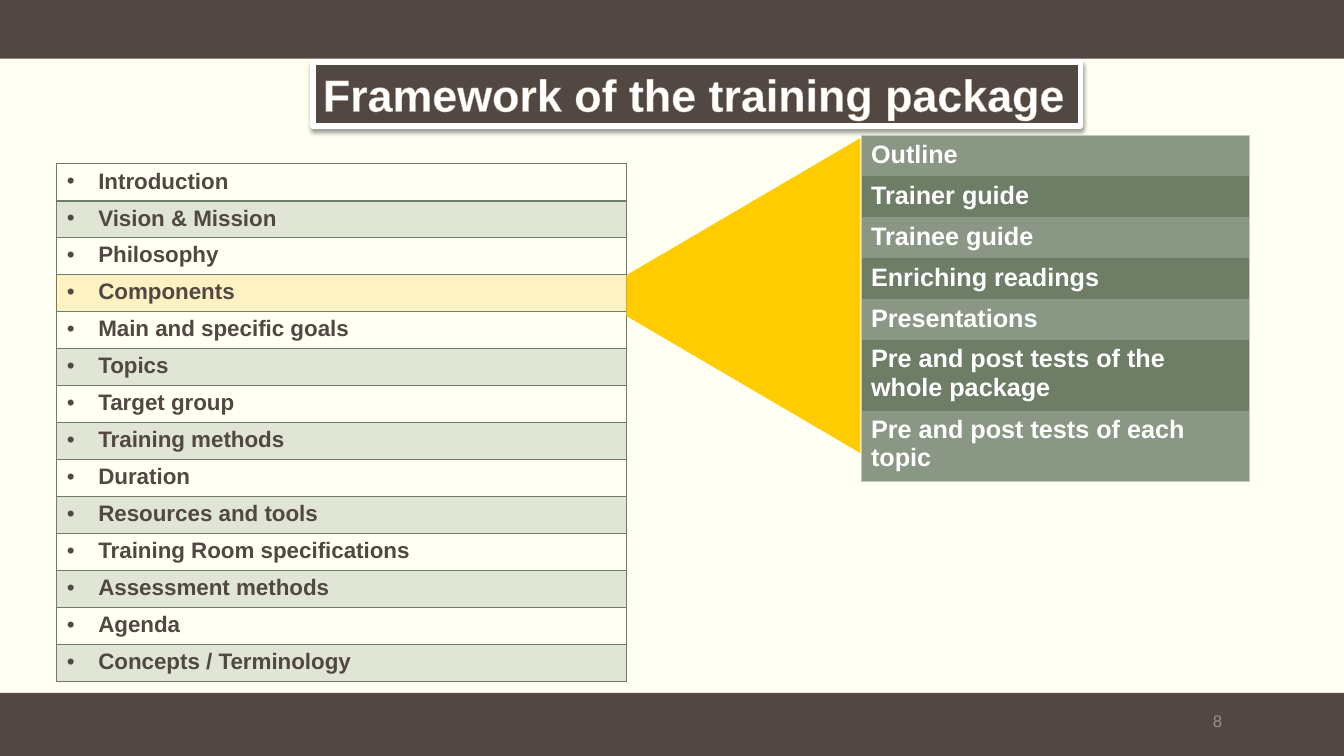
from lxml.etree import SubElement
from pptx import Presentation
from pptx.dml.color import RGBColor
from pptx.enum.shapes import MSO_SHAPE
from pptx.enum.text import MSO_ANCHOR, MSO_AUTO_SIZE, PP_ALIGN
from pptx.oxml import parse_xml
from pptx.oxml.ns import nsdecls, qn
from pptx.util import Pt

NO_TABLE_STYLE = "{2D5ABB26-0587-4C30-8999-92F81FD0307C}"
BROWN, GREEN, PALE_GREEN = "514843", "6D7D66", "8A9785"
CREAM, WHITE, AMBER, YELLOW = "FFFFF3", "FFFFFF", "FFC000", "FFCC00"
EDGE_GREY, NUMBER_GREY, TITLE_EDGE = "C4C8C1", "9D8F88", "AE9A7E"

FRAMEWORK = [
    "Introduction", "Vision & Mission", "Philosophy", "Components",
    "Main and specific goals", "Topics", "Target group", "Training methods",
    "Duration", "Resources and tools", "Training Room specifications",
    "Assessment methods", "Agenda", "Concepts / Terminology",
]
COMPONENTS = [
    "Outline", "Trainer guide", "Trainee guide", "Enriching readings",
    "Presentations", "Pre and post tests of the whole package",
    "Pre and post tests of each topic",
]


def px(length):
    return length * 9525


def color(code):
    return RGBColor.from_string(code)


def paint(fill, code, opacity=100):
    fill.solid()
    fill.fore_color.rgb = color(code)
    if opacity < 100:
        tint = fill._xPr.find(qn("a:solidFill"))[0]
        SubElement(tint, qn("a:alpha"), val=str(opacity * 1000))


def write(frame, text, size=16, ink=WHITE, bold=True, align=PP_ALIGN.LEFT, bullet=False):
    para = frame.paragraphs[0]
    para.alignment = align
    if bullet:
        layout = para._p.get_or_add_pPr()
        layout.set("marL", str(px(30)))
        layout.set("indent", str(px(-30)))
        SubElement(layout, qn("a:buFont"), typeface="Arial")
        SubElement(layout, qn("a:buChar"), char="•")
    span = para.add_run()
    span.text = text
    span.font.name = "Arial"
    span.font.size = Pt(size)
    span.font.bold = bold
    span.font.color.rgb = color(ink)
    return span


class SlideBuilder:
    def __init__(self, deck):
        self.page = deck.slides.add_slide(deck.slide_layouts[6])
        paint(self.page.background.fill, CREAM)

    def shape(self, kind, left, top, width, height, fill):
        box = self.page.shapes.add_shape(kind, px(left), px(top), px(width), px(height))
        box.shadow.inherit = False
        paint(box.fill, fill)
        box.line.fill.background()
        return box

    def title(self, text, left, top, width, height):
        box = self.shape(MSO_SHAPE.RECTANGLE, left, top, width, height, BROWN)
        paint(box.line.fill, WHITE)
        box.line.width = Pt(3.82)
        effects = box._element.spPr.find(qn("a:effectLst"))
        effects.append(parse_xml(
            f'<a:outerShdw {nsdecls("a")} blurRad="{Pt(3.5)}" dist="{Pt(2)}" dir="5400000" '
            'rotWithShape="0"><a:srgbClr val="000000"><a:alpha val="38000"/>'
            '</a:srgbClr></a:outerShdw>'))
        frame = box.text_frame
        frame.word_wrap = True
        frame.auto_size = MSO_AUTO_SIZE.SHAPE_TO_FIT_TEXT
        frame.vertical_anchor = MSO_ANCHOR.TOP
        span = write(frame, text, size=32)
        span.font._element.insert(0, parse_xml(
            f'<a:ln {nsdecls("a")} w="{Pt(0.8)}"><a:solidFill>'
            f'<a:srgbClr val="{TITLE_EDGE}"/></a:solidFill></a:ln>'))

    def number(self, text, left, top, width, height):
        box = self.page.shapes.add_textbox(px(left), px(top), px(width), px(height))
        frame = box.text_frame
        frame.word_wrap = True
        frame.margin_left = frame.margin_right = 0
        frame.vertical_anchor = MSO_ANCHOR.MIDDLE
        write(frame, text, size=12, ink=NUMBER_GREY, bold=False, align=PP_ALIGN.RIGHT)

    def table(self, items, left, top, width, height):
        frame = self.page.shapes.add_table(
            len(items), 1, px(left), px(top), px(width), px(height))
        table = frame.table
        table.first_row = table.horz_banding = False
        table._tbl.tblPr.find(qn("a:tableStyleId")).text = NO_TABLE_STYLE
        return table

    def borders(self, cell, code, widths):
        for place, (side, width) in enumerate(widths.items()):
            cell._tc.get_or_add_tcPr().insert(place, parse_xml(
                f'<a:ln{side} {nsdecls("a")} w="{Pt(width)}"><a:solidFill>'
                f'<a:srgbClr val="{code}"/></a:solidFill></a:ln{side}>'))

    def framework_table(self, items, highlight, left, top, width, height):
        table = self.table(items, left, top, width, height)
        for row, item in enumerate(items):
            cell = table.cell(row, 0)
            write(cell.text_frame, item, ink=BROWN, bullet=True)
            if item == highlight:
                paint(cell.fill, AMBER, opacity=20)
            elif row % 2:
                paint(cell.fill, GREEN, opacity=20)
            else:
                cell.fill.background()
            above, below = 2 if row == 1 else 1, 2 if row == 0 else 1
            self.borders(cell, GREEN, {"L": 1, "R": 1, "T": above, "B": below})

    def component_table(self, items, left, top, width, row_height, tall_height):
        heights = [row_height] * (len(items) - 2) + [tall_height] * 2
        table = self.table(items, left, top, width, sum(heights))
        for row, (item, height) in enumerate(zip(items, heights)):
            table.rows[row].height = px(height)
            cell = table.cell(row, 0)
            write(cell.text_frame, item, size=18)
            paint(cell.fill, GREEN if row % 2 else PALE_GREEN)
            sides = {"L": 0.5, "R": 0.5}
            if row == 0:
                sides["T"] = 0.5
            if row == len(items) - 1:
                sides["B"] = 0.5
            self.borders(cell, EDGE_GREY, sides)


def main():
    deck = Presentation()
    deck.slide_width, deck.slide_height = px(1280), px(720)
    builder = SlideBuilder(deck)
    for top, height in ((660, 60), (0, 56)):
        builder.shape(MSO_SHAPE.RECTANGLE, 0, top, 1280, height, BROWN)
    builder.number("8", 972, 667, 192, 38)
    builder.title("Framework of the training package", 298, 59, 731, 61)
    builder.framework_table(FRAMEWORK, "Components", 54, 156, 543, 493)
    builder.component_table(COMPONENTS, 820, 129, 370, 39, 67)
    funnel = builder.shape(MSO_SHAPE.TRAPEZOID, 558, 170, 300, 223, YELLOW)
    funnel.adjustments[0] = 0.586
    funnel.rotation = 270
    deck.save("out.pptx")


if __name__ == "__main__":
    main()
